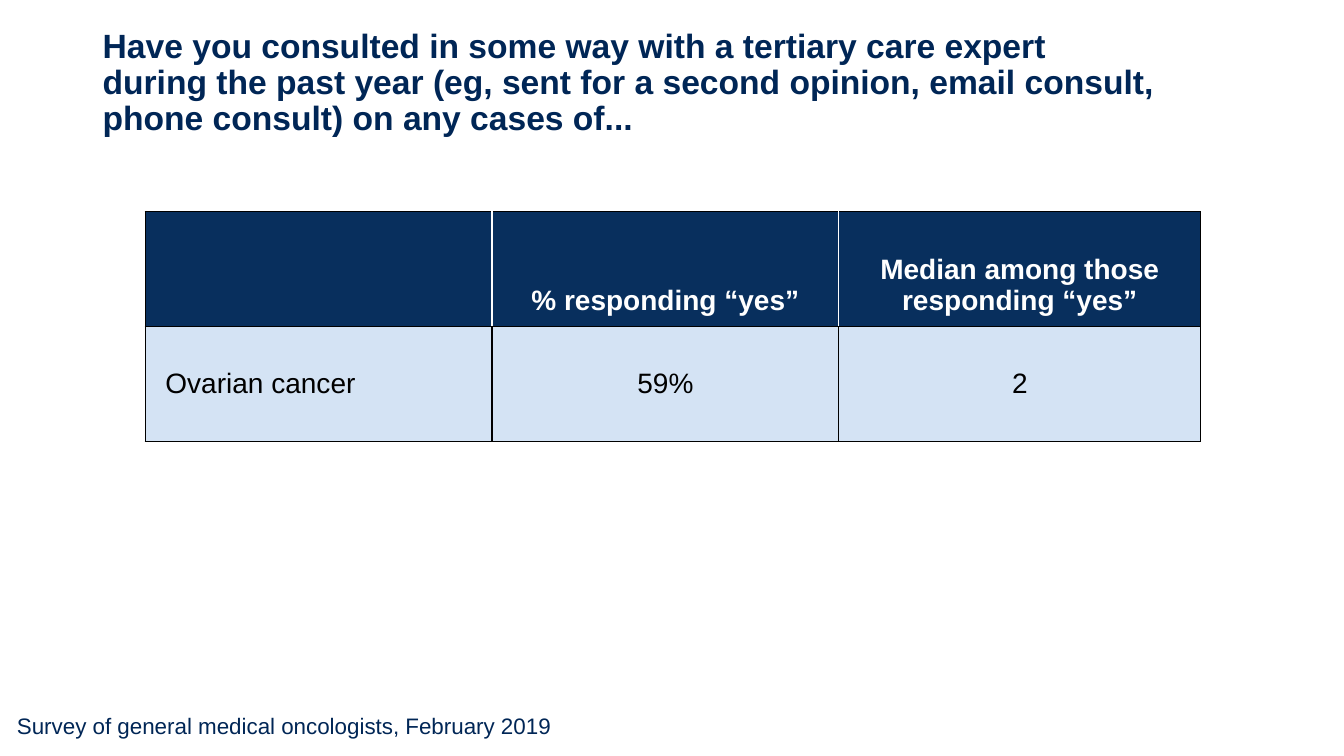
from lxml.etree import SubElement
from pptx import Presentation
from pptx.dml.color import RGBColor
from pptx.enum.text import MSO_ANCHOR as Anchor, PP_ALIGN as Align
from pptx.oxml.ns import qn
from pptx.util import Inches, Pt

COLORS = {
    "title": "002656",
    "header": "082F5D",
    "body": "D4E3F4",
    "white": "FFFFFF",
    "black": "000000",
}
QUESTION = (
    "Have you consulted in some way with a tertiary care expert \v"
    "during the past year (eg, sent for a second opinion, email consult, "
    "phone consult) on any cases of..."
)
ANSWERS = [
    ["", "% responding “yes”", "Median among those responding “yes”"],
    ["Ovarian cancer", "59%", "2"],
]
COLUMN_WIDTHS = [3.44, 3.44, 3.59]
ROW_HEIGHT = 1.14


def write_text(frame, text, size=20, color="black", bold=False,
               align=Align.LEFT, spacing=1.0):
    paragraph = frame.paragraphs[0]
    paragraph.text = text
    paragraph.alignment = align
    paragraph.line_spacing = spacing
    for run in paragraph.runs:
        run.font.name = "Arial"
        run.font.size = Pt(size)
        run.font.bold = bold
        run.font.color.rgb = RGBColor.from_string(COLORS[color])


def add_text(slide, text, left, top, width, height, anchor=Anchor.TOP, **style):
    frame = slide.shapes.add_textbox(
        Inches(left), Inches(top), Inches(width), Inches(height)).text_frame
    frame.word_wrap = True
    frame.vertical_anchor = anchor
    write_text(frame, text, **style)


def set_borders(cell, **sides):
    properties = cell._tc.get_or_add_tcPr()
    for side in "LRTB":
        border = SubElement(properties, qn(f"a:ln{side}"), w=str(Pt(1)))
        fill = SubElement(border, qn("a:solidFill"))
        SubElement(fill, qn("a:srgbClr"), val=COLORS[sides.get(side, "black")])


def format_cell(cell, text, is_header, column):
    last = len(COLUMN_WIDTHS) - 1
    inner = {"L": column > 0, "R": column < last}
    set_borders(cell, **{side: "white" for side, inside in inner.items()
                         if is_header and inside})
    cell.fill.solid()
    fill = COLORS["header" if is_header else "body"]
    cell.fill.fore_color.rgb = RGBColor.from_string(fill)
    cell.margin_left = cell.margin_right = Inches(0.2)
    cell.margin_top = cell.margin_bottom = Inches(0.1)
    cell.vertical_anchor = Anchor.BOTTOM if is_header else Anchor.MIDDLE
    write_text(cell.text_frame, text, bold=is_header,
               color="white" if is_header else "black",
               align=Align.CENTER if column else Align.LEFT)


def add_answer_table(slide, left, top):
    table = slide.shapes.add_table(
        len(ANSWERS), len(COLUMN_WIDTHS), Inches(left), Inches(top),
        Inches(sum(COLUMN_WIDTHS)), Inches(ROW_HEIGHT * len(ANSWERS))).table
    for column, width in zip(table.columns, COLUMN_WIDTHS):
        column.width = Inches(width)
    for row_index, answers in enumerate(ANSWERS):
        table.rows[row_index].height = Inches(ROW_HEIGHT)
        for column_index, answer in enumerate(answers):
            format_cell(table.cell(row_index, column_index), answer,
                        row_index == 0, column_index)


def main():
    deck = Presentation()
    deck.slide_width = Inches(13.33)
    deck.slide_height = Inches(7.5)
    slide = deck.slides.add_slide(deck.slide_layouts[6])
    add_text(slide, "Survey of general medical oncologists, February 2019",
             0.07, 7.02, 5.7, 0.37, size=16, color="title")
    add_text(slide, QUESTION, 0.92, 0, 11.5, 1.66, anchor=Anchor.MIDDLE,
             size=24, color="title", bold=True, spacing=0.9)
    add_answer_table(slide, 1.44, 2.1)
    deck.save("out.pptx")


if __name__ == "__main__":
    main()
